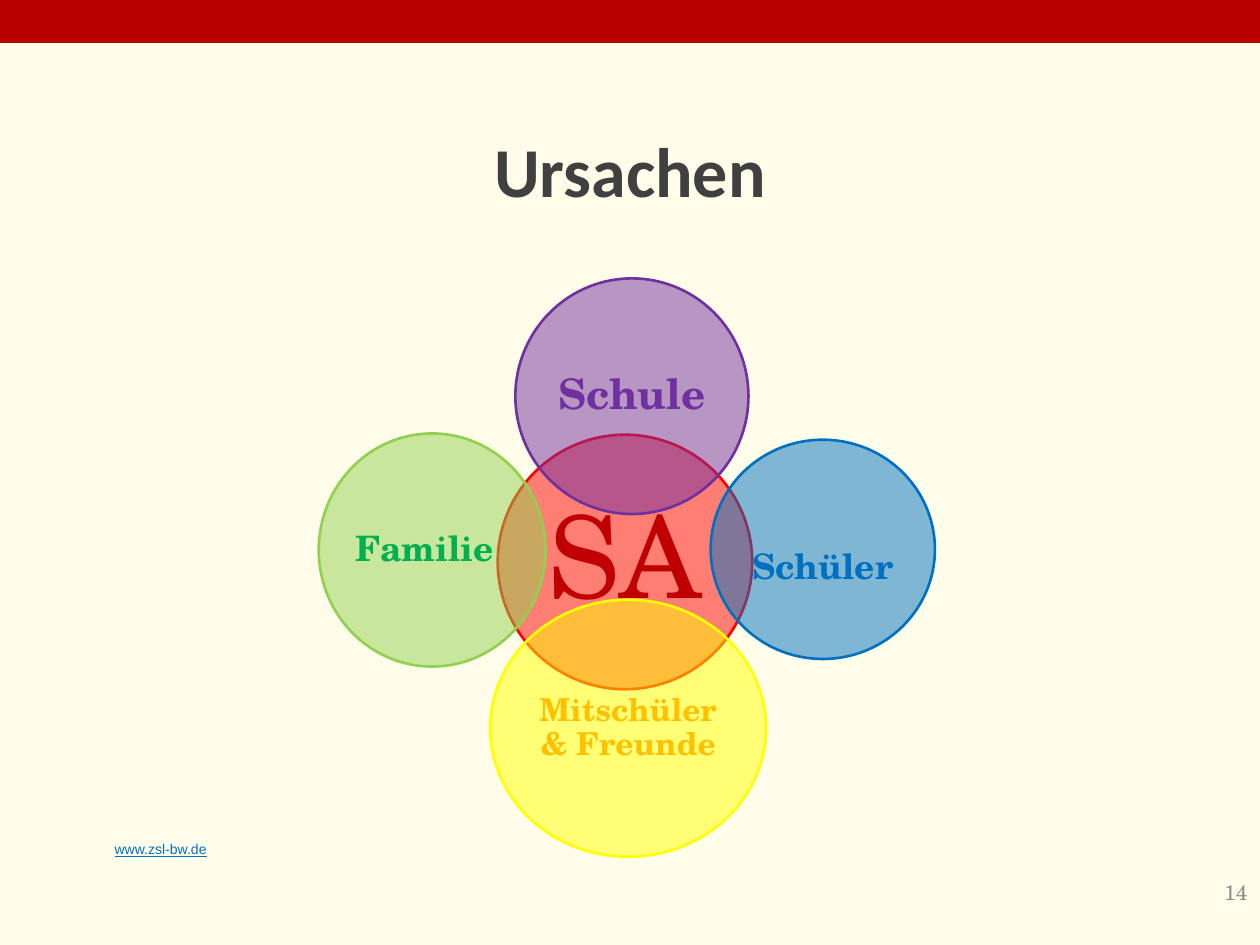
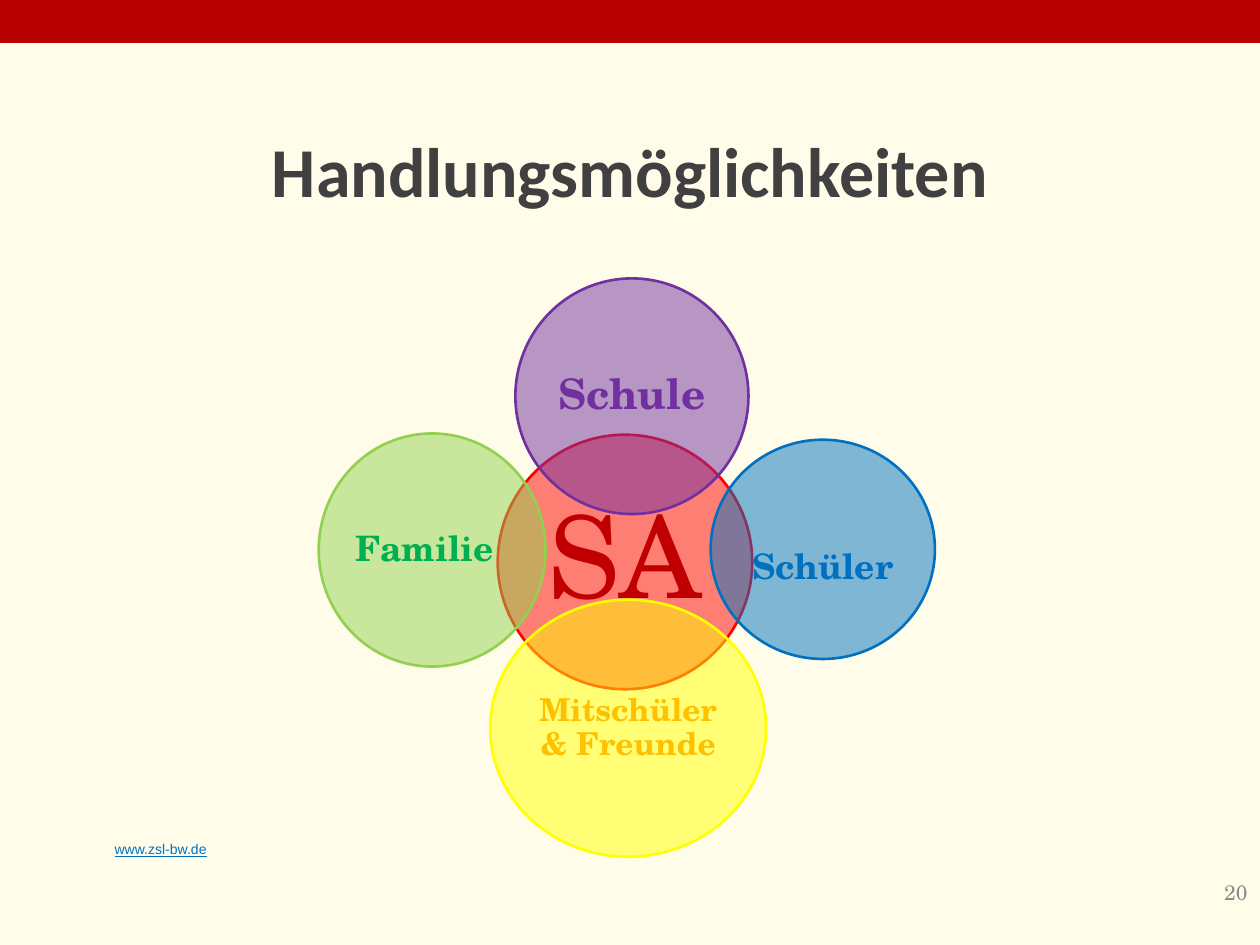
"""Build two slides on causes and remedies around a ring of circles."""
from typing import Any, NamedTuple

from lxml import etree
from pptx import Presentation, util as u
from pptx.dml.color import RGBColor
from pptx.enum import shapes, text
from pptx.oxml.ns import qn

COLS, ROWS = 100, 75
WIDE, HIGH = u.Inches(10), u.Inches(7.5)
RIM = 0.1464
HUES = {
    "page": "FFFDE9", "band": "B80000", "title": "404040", "num": "8C8C8C",
    "red": "FF0000", "wine": "C00000", "plum": "7030A0", "blue": "0070C0",
    "sun": "FFFF00", "gold": "FFC000", "lime": "92D050", "leaf": "00B050",
}
SERIF = "TeX Gyre Schola"
LEFT, MID, RIGHT = (text.PP_ALIGN.LEFT, text.PP_ALIGN.CENTER,
                    text.PP_ALIGN.RIGHT)
TOP, HALF = text.MSO_ANCHOR.TOP, text.MSO_ANCHOR.MIDDLE


class Area(NamedTuple):
    """Place on the grid, in columns and rows."""
    col: float
    row: float
    cols: float
    rows: float

    def inner(self) -> "Area":
        """Return the box that fits inside an ellipse here."""
        return Area(self.col + RIM * self.cols, self.row + RIM * self.rows,
                    self.cols * (1 - 2 * RIM), self.rows * (1 - 2 * RIM))

    def size(self) -> list[int]:
        """Return left, top, width and height as lengths."""
        unit = (WIDE / COLS, HIGH / ROWS) * 2
        return [round(part * step) for part, step in zip(self, unit)]


class Style(NamedTuple):
    """Look of a line of text."""
    size: float
    hue: str
    face: str = SERIF
    bold: bool = False
    under: bool = False
    align: Any = MID
    anchor: Any = HALF
    pad: tuple[float, float] = (0.1, 0.05)
    tight: bool = False


class Ring(NamedTuple):
    """Labelled circle of the diagram."""
    label: str
    area: Area
    hue: str
    style: Style


class Page(NamedTuple):
    """Words that differ between slides."""
    title: str
    num: str


def word(hue: str, size: float, align: Any = MID) -> Style:
    """Return the style of an outer circle's label."""
    return Style(size, hue, bold=True, align=align, pad=(0.03, 0.03), tight=True)


BAND = Area(0, 0, COLS, 3.4)
LINK = Area(7.8, 66.2, 9.9, 2.3)
HEAD = Area(5, 7.6, 90, 11.7)
FOOT = Area(76.7, 68.3, 23.3, 5)
LOOKS = {
    "link": Style(8, "blue", "Arial", under=True, anchor=TOP),
    "head": Style(40, "title", "Calibri", bold=True),
    "foot": Style(12, "num", align=RIGHT),
}
RINGS = [
    Ring("SA", Area(39.5, 34.5, 20.2, 20.2), "red",
         Style(65, "wine", pad=(0.09, 0.09), tight=True)),
    Ring("Schule", Area(40.9, 22.1, 18.5, 18.7), "plum", word("plum", 24)),
    Ring(" Schüler", Area(56.4, 34.9, 17.8, 17.4), "blue", word("blue", 20)),
    Ring("Mitschüler & Freunde", Area(38.9, 47.6, 21.9, 20.4), "sun",
         word("gold", 18)),
    Ring("Familie", Area(25.3, 34.4, 18, 18.5), "lime",
         word("leaf", 20, LEFT)),
]
PAGES = [Page("Ursachen", "14"), Page("Handlungsmöglichkeiten", "20")]


def tint(name: str) -> RGBColor:
    """Return a named colour."""
    return RGBColor.from_string(HUES[name])


def apply(item: Any, vals: dict[str, Any]) -> None:
    """Set each format value on an object."""
    for key, val in vals.items():
        setattr(item, key, val)


def write(host: Any, words: str, area: Area, look: Style) -> None:
    """Add a text box to a slide or group."""
    frame = host.shapes.add_textbox(*area.size()).text_frame
    side, edge = map(u.Inches, look.pad)
    apply(frame, {"word_wrap": True, "vertical_anchor": look.anchor,
                  "margin_left": side, "margin_right": side,
                  "margin_top": edge, "margin_bottom": edge})
    para = frame.paragraphs[0]
    para.alignment = look.align
    if look.tight:
        apply(para, {"line_spacing": 0.9,
                     "space_after": u.Pt(0.35 * look.size)})
    run = para.add_run()
    run.text = words
    apply(run.font, {"name": look.face, "size": u.Pt(look.size),
                     "bold": look.bold, "underline": look.under})
    run.font.color.rgb = tint(look.hue)


def block(host: Any, kind: Any, area: Area, hue: str) -> Any:
    """Add a plain filled shape."""
    form = host.shapes.add_shape(kind, *area.size())
    form.shadow.inherit = False
    form.fill.solid()
    form.fill.fore_color.rgb = tint(hue)
    form.line.fill.background()
    return form


def circle(host: Any, ring: Ring) -> None:
    """Add a half clear circle and its label."""
    form = block(host, shapes.MSO_SHAPE.OVAL, ring.area, ring.hue)
    shade = form.fill._xPr.find(qn("a:solidFill"))[0]
    etree.SubElement(shade, qn("a:alpha"), val="50000")
    form.line.color.rgb = tint(ring.hue)
    form.line.width = u.Pt(1.5)
    write(host, ring.label, ring.area.inner(), ring.style)


def draw(deck: Any, page: Page) -> None:
    """Add one slide."""
    slide = deck.slides.add_slide(deck.slide_layouts[6])
    back = slide.background.fill
    back.solid()
    back.fore_color.rgb = tint("page")
    block(slide, shapes.MSO_SHAPE.RECTANGLE, BAND, "band")
    write(slide, "www.zsl-bw.de", LINK, LOOKS["link"])
    group = slide.shapes.add_group_shape()
    for ring in RINGS:
        circle(group, ring)
    write(slide, page.title, HEAD, LOOKS["head"])
    write(slide, page.num, FOOT, LOOKS["foot"])


def main() -> None:
    """Build and save the deck."""
    deck = Presentation()
    apply(deck, {"slide_width": WIDE, "slide_height": HIGH})
    for page in PAGES:
        draw(deck, page)
    deck.save("out.pptx")


if __name__ == "__main__":
    main()
